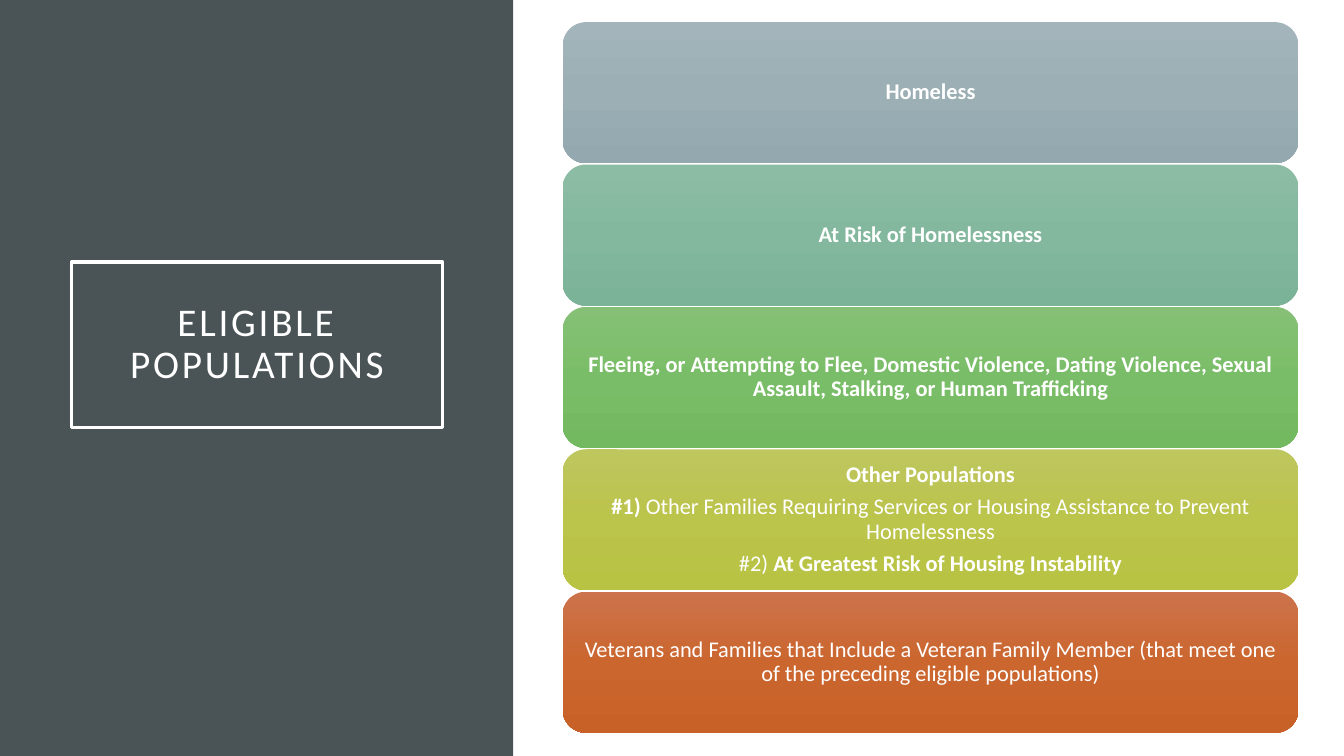
from collections import namedtuple
from copy import deepcopy

from pptx import Presentation
from pptx.dml.color import RGBColor
from pptx.enum.shapes import MSO_SHAPE
from pptx.enum.text import MSO_ANCHOR, PP_ALIGN
from pptx.oxml.ns import qn
from pptx.util import Inches, Pt

Box = namedtuple("Box", "left top width height")
WIDTH, HEIGHT = 13.33, 7.5
WHITE = "FFFFFF"
CARD_HEIGHT = 1.4

POPULATIONS = [
    (("A3B5BB", "9BAFB5", "93A9AF"), [[("Homeless", True)]]),
    (("8DBCA5", "83B89E", "7BB398"), [[("At Risk of Homelessness", True)]]),
    (("85C076", "7ABD68", "73B960"), [
        [("Fleeing, or Attempting to Flee, Domestic Violence, Dating Violence, "
          "Sexual Assault, Stalking, or Human Trafficking", True)],
    ]),
    (("BEC65E", "BBC44B", "B8C243"), [
        [("Other Populations", True)],
        [("#1) ", True),
         ("Other Families Requiring Services or Housing Assistance "
          "to Prevent Homelessness", False)],
        [("#2) ", False), ("At Greatest Risk of Housing Instability", True)],
    ]),
    (("CC734B", "CB662F", "C86128"), [
        [("Veterans and Families that Include a Veteran Family Member "
          "(that meet one of the preceding eligible populations)", False)],
    ]),
]


def color(code):
    """Turn a hex string into a colour."""
    return RGBColor.from_string(code)


def add_panel(page, box, kind=MSO_SHAPE.RECTANGLE):
    """Add a preset shape without shadow, fill or line."""
    panel = page.shapes.add_shape(kind, *(Inches(length) for length in box))
    panel.shadow.inherit = False
    panel.fill.background()
    panel.line.fill.background()
    return panel


def fill_gradient(panel, codes):
    """Fill a shape from top to bottom with three evenly spaced colours."""
    panel.fill.gradient()
    panel.fill.gradient_angle = 270
    first = panel.element.spPr.find(qn("a:gradFill")).find(qn("a:gsLst"))[0]
    first.addnext(deepcopy(first))
    for index, (stop, code) in enumerate(zip(panel.fill.gradient_stops, codes)):
        stop.position = index / 2
        stop.color.rgb = color(code)


def write_text(panel, paragraphs, size=16, inset=0.07, gap=6, tracking=0):
    """Write centred paragraphs, each a list of (text, bold) spans."""
    frame = panel.text_frame
    frame.word_wrap = True
    frame.vertical_anchor = MSO_ANCHOR.MIDDLE
    frame.margin_left = frame.margin_right = Inches(inset)
    frame.margin_top = frame.margin_bottom = Inches(inset)
    for index, spans in enumerate(paragraphs):
        para = frame.add_paragraph() if index else frame.paragraphs[0]
        para.alignment = PP_ALIGN.CENTER
        para.line_spacing = 0.9
        para.space_after = Pt(gap)
        for text, bold in spans:
            span = para.add_run()
            span.text = text
            span.font.name = "Calibri"
            span.font.size = Pt(size)
            span.font.bold = bold
            span.font.color.rgb = color(WHITE)
            if tracking:
                span.font._element.set("spc", str(tracking * 100))


def add_title_region(page, box):
    """Draw the dark side region with its framed title."""
    side = add_panel(page, box)
    side.fill.solid()
    side.fill.fore_color.rgb = color("4A5356")
    frame = add_panel(page, Box(box.left + 0.71, box.top + 2.6, 3.68, 1.64))
    frame.line.color.rgb = color(WHITE)
    frame.line.width = Pt(2.5)
    write_text(frame, [[("ELIGIBLE POPULATIONS", False)]],
               size=28, inset=0.2, gap=0, tracking=2)


def add_population_cards(page, box):
    """Stack one rounded card per population evenly in the box."""
    pitch = (box.height - CARD_HEIGHT) / (len(POPULATIONS) - 1)
    for row, (codes, paragraphs) in enumerate(POPULATIONS):
        place = Box(box.left, box.top + row * pitch, box.width, CARD_HEIGHT)
        card = add_panel(page, place, MSO_SHAPE.ROUNDED_RECTANGLE)
        fill_gradient(card, codes)
        write_text(card, paragraphs)


def main():
    """Build the slide and save it."""
    deck = Presentation()
    deck.slide_width = Inches(WIDTH)
    deck.slide_height = Inches(HEIGHT)
    page = deck.slides.add_slide(deck.slide_layouts[6])
    add_title_region(page, Box(0, 0, 5.09, HEIGHT))
    add_population_cards(page, Box(5.58, 0.22, 7.3, 7.05))
    deck.save("out.pptx")


if __name__ == "__main__":
    main()
